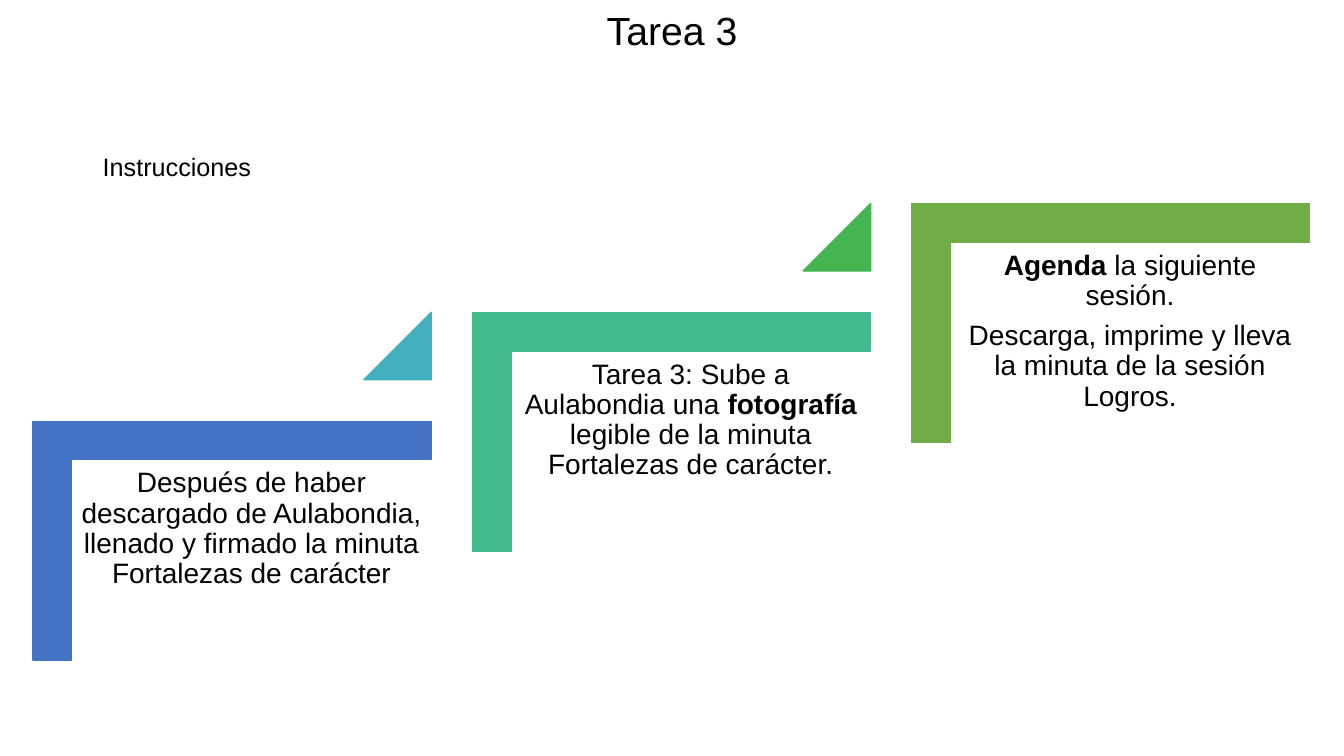
from pptx import Presentation
from pptx.dml.color import RGBColor
from pptx.enum.shapes import MSO_SHAPE
from pptx.enum.text import MSO_ANCHOR, PP_ALIGN
from pptx.util import Cm, Pt

CORNER = MSO_SHAPE.CORNER
TRIANGLE = MSO_SHAPE.ISOSCELES_TRIANGLE
TOP = MSO_ANCHOR.TOP
CENTER = PP_ALIGN.CENTER
LEFT = PP_ALIGN.LEFT

COLORS = {
    "text": "000000",
    "blue": "4472C4",
    "cyan": "43AFC0",
    "teal": "43BB8D",
    "green": "45B451",
    "olive": "70AD47",
}

STEPS = [
    ("blue", "cyan", [
        [("Después de haber descargado de Aulabondia, llenado y firmado "
          "la minuta Fortalezas de carácter", False)],
    ]),
    ("teal", "green", [
        [("Tarea 3: Sube a Aulabondia una ", False), ("fotografía ", True),
         ("legible de la minuta Fortalezas de carácter.", False)],
    ]),
    ("olive", None, [
        [("Agenda ", True), ("la siguiente sesión.", False)],
        [("Descarga, imprime y lleva la minuta de la sesión Logros.", False)],
    ]),
]


class SlideBuilder:
    font_name = "Arial"

    def __init__(self, slide):
        self.slide = slide

    def style(self, span, size, bold=False):
        span.font.name = self.font_name
        span.font.size = Pt(size)
        span.font.bold = bold
        span.font.color.rgb = RGBColor.from_string(COLORS["text"])

    def title(self, text, width, height):
        box = self.slide.shapes.title
        box.left, box.top, box.width, box.height = 0, 0, Cm(width), Cm(height)
        frame = box.text_frame
        frame.text = text
        frame.vertical_anchor = TOP
        frame.margin_top = Cm(0.3)
        para = frame.paragraphs[0]
        para.alignment = CENTER
        para.line_spacing = 0.9
        self.style(para.runs[0], 28)

    def shape(self, kind, left, top, width, height, color, adjustments, rotation=0):
        shape = self.slide.shapes.add_shape(
            kind, Cm(left), Cm(top), Cm(width), Cm(height))
        shape.shadow.inherit = False
        shape.rotation = rotation
        for index, value in enumerate(adjustments):
            shape.adjustments[index] = value
        shape.fill.solid()
        shape.fill.fore_color.rgb = RGBColor.from_string(COLORS[color])
        shape.line.color.rgb = RGBColor.from_string(COLORS[color])
        shape.line.width = Pt(1)

    def text(self, left, top, width, height, paragraphs, size,
             align=LEFT, line_spacing=1.0, space_after=0, margin=None):
        box = self.slide.shapes.add_textbox(
            Cm(left), Cm(top), Cm(width), Cm(height))
        frame = box.text_frame
        frame.word_wrap = True
        if margin is not None:
            frame.margin_left = frame.margin_right = Cm(margin)
            frame.margin_top = frame.margin_bottom = Cm(margin)
        for index, spans in enumerate(paragraphs):
            para = frame.add_paragraph() if index else frame.paragraphs[0]
            para.alignment = align
            para.line_spacing = line_spacing
            para.space_after = Pt(space_after)
            for words, bold in spans:
                span = para.add_run()
                span.text = words
                self.style(span, size, bold)

    def step(self, left, top, corner_color, triangle_color, paragraphs):
        self.shape(CORNER, left, top, 6.02, 10.03, corner_color,
                   [0.161, 0.161], rotation=90)
        self.text(left - 1.02, top + 3, 9.04, 7.4, paragraphs, 20,
                  align=CENTER, line_spacing=0.9, space_after=7, margin=0.2)
        if triangle_color:
            self.shape(TRIANGLE, left + 6.33, top - 0.74, 1.7, 1.7,
                       triangle_color, [1])


def main():
    deck = Presentation()
    deck.slide_width = Cm(33.87)
    deck.slide_height = Cm(19.05)
    page = SlideBuilder(deck.slides.add_slide(deck.slide_layouts[5]))
    page.title("Tarea 3", 33.87, 3.68)
    for index, (corner_color, triangle_color, paragraphs) in enumerate(STEPS):
        page.step(2.84 + 11.07 * index, 8.61 - 2.74 * index,
                  corner_color, triangle_color, paragraphs)
    page.text(2.34, 3.68, 6.27, 1.02, [[("Instrucciones", False)]], 18)
    deck.save("out.pptx")


if __name__ == "__main__":
    main()
